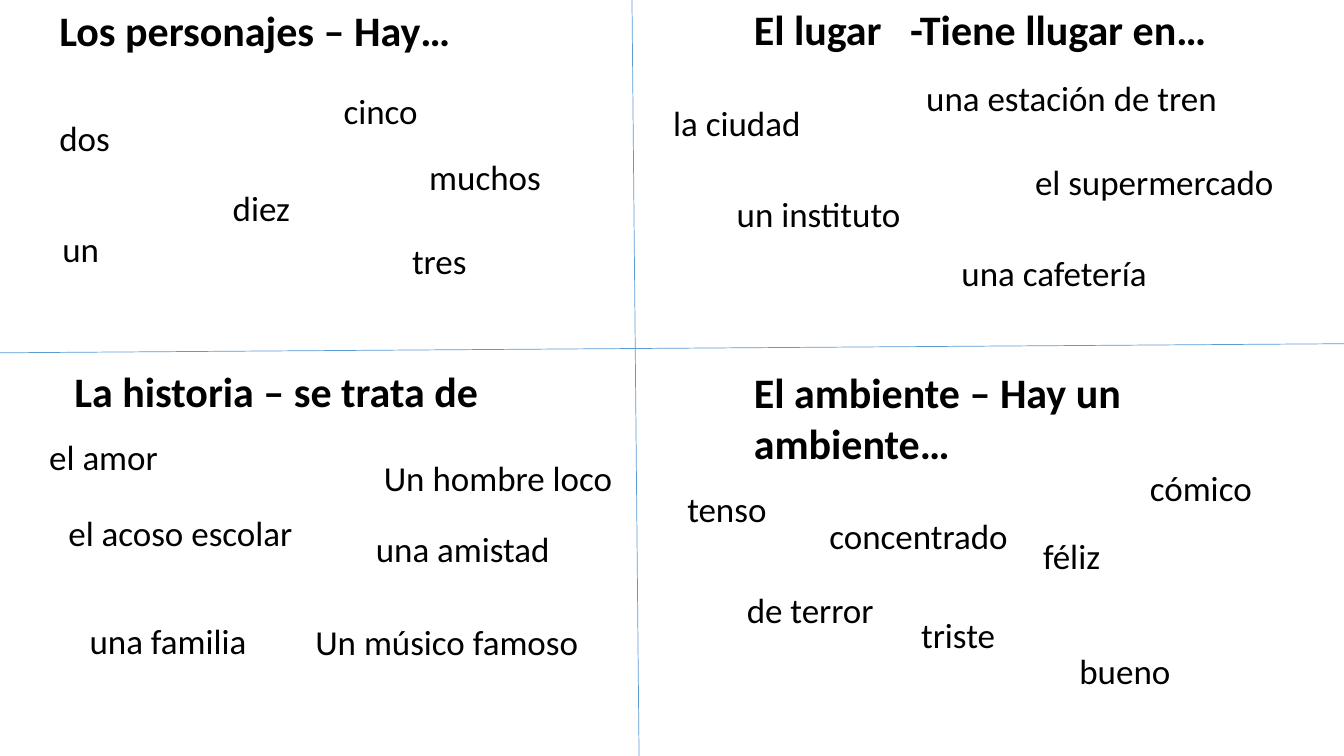
from lxml.etree import SubElement as Sub
from pptx import Presentation
from pptx.dml.color import RGBColor as RGB
from pptx.enum.shapes import MSO_CONNECTOR as Link
from pptx.enum.text import MSO_AUTO_SIZE as Fit
from pptx.oxml.ns import qn
from pptx.util import Inches, Pt


class Theme:
    font = "Calibri"
    ink = RGB(0x00, 0x00, 0x00)
    rule = RGB(0x5B, 0x9B, 0xD5)
    head = Pt(30)
    word = Pt(25)
    thin = Pt(0.5)


deck = Presentation()
deck.slide_width, deck.slide_height = Inches(13.33), Inches(7.5)
slide = deck.slides.add_slide(deck.slide_layouts[6])

# Grid of 40 columns by 30 rows
COL, ROW = deck.slide_width / 40, deck.slide_height / 30


def put(text, x, y, wide, high, size, bold=False):
    """Place one text box, measured in columns and rows."""
    box = slide.shapes.add_textbox(
        int(x * COL), int(y * ROW), int(wide * COL), int(high * ROW))
    frame = box.text_frame
    frame.word_wrap = True
    frame.auto_size = Fit.SHAPE_TO_FIT_TEXT
    para = frame.paragraphs[0]
    para.text = text
    font = para.font
    font.name, font.size, font.bold = Theme.font, size, bold
    font.color.rgb = Theme.ink
    return para


# Lines between the four fields
for x1, y1, x2, y2 in [(18.81, 0, 19.02, 30), (40, 13.64, 0, 14)]:
    line = slide.shapes.add_connector(
        Link.STRAIGHT, int(x1 * COL), int(y1 * ROW), int(x2 * COL), int(y2 * ROW))
    line.line.color.rgb = Theme.rule
    line.line.width = Theme.thin
    Sub(line._element.spPr, qn("a:effectLst"))

# Each field: heading, column, row, height, then its words (4.05 columns wide by default)
fields = [
    ("Los personajes – Hay…", 1.47, 0, 2.44, [
        ("dos", 1.47, 4.44),
        ("cinco", 9.93, 3.36),
        ("diez", 6.63, 7.2),
        ("muchos", 12.48, 5.96),
        ("un", 1.56, 8.84),
        ("tres", 11.97, 9.32),
    ]),
    ("El lugar\t-Tiene llugar en…", 22.14, -0.04, 4.44, [
        ("la ciudad", 19.74, 3.84, 6.84),
        ("una estación de tren", 27.27, 2.84, 12.33),
        ("un instituto", 21.63, 7.44, 6.24),
        ("el supermercado", 30.51, 6.16, 9.09),
        ("una cafetería", 28.32, 9.8, 8.94),
    ]),
    ("La historia – se trata de", 1.92, 14.32, 2.44, [
        ("el amor", 1.17, 17.08),
        ("Un hombre loco", 11.13, 17.92, 8.1),
        ("el acoso escolar", 1.74, 20.12, 8.22),
        ("una amistad", 10.89, 20.72, 7.23),
        ("una familia", 2.37, 24.4, 6.48),
        ("Un músico famoso", 9.09, 24.44, 9.36),
    ]),
    ("El ambiente – Hay un ambiente…", 22.14, 14.36, 4.44, [
        ("tenso", 20.16, 19.16),
        ("cómico", 33.93, 18.32),
        ("concentrado", 24.39, 20.2, 6.12),
        ("féliz", 30.75, 21),
        ("de terror", 21.93, 23.16, 5.49),
        ("triste", 27.12, 24.16),
        ("bueno", 31.83, 25.56),
    ]),
]

for head, x, y, high, words in fields:
    para = put(head, x, y, 16.44, high, Theme.head, True)
    if "\t" in head:
        # Tab stop for the second half of the heading
        stops = para._p.pPr.makeelement(qn("a:tabLst"))
        para._p.pPr.insert(0, stops)
        Sub(stops, qn("a:tab"), pos=str(int(4.65 * COL)), algn="l")
    for word, left, top, *wide in words:
        put(word, left, top, wide[0] if wide else 4.05, 2.08, Theme.word)

deck.save("out.pptx")
